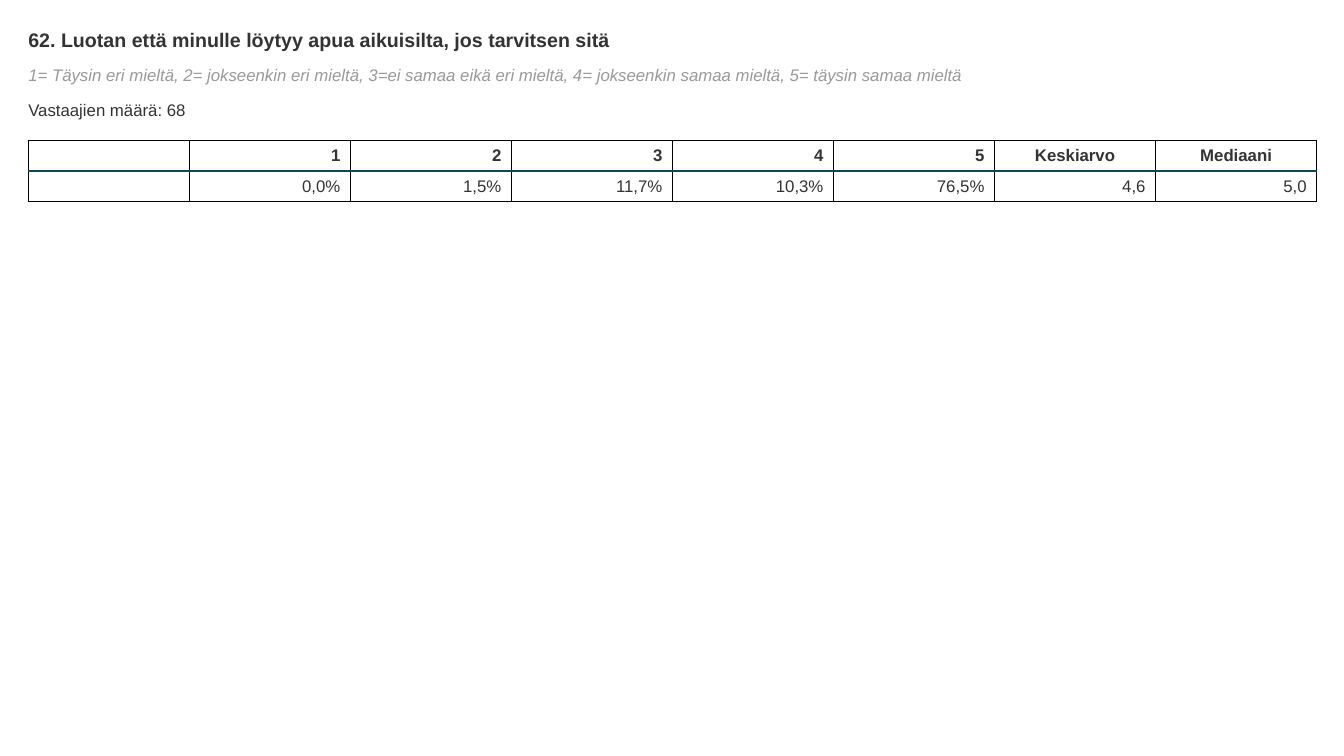
from dataclasses import dataclass

from lxml.etree import SubElement
from pptx import Presentation
from pptx.dml.color import RGBColor
from pptx.enum.text import MSO_ANCHOR as Anchor, MSO_AUTO_SIZE as AutoSize, PP_ALIGN as Align
from pptx.oxml.ns import qn
from pptx.util import Emu, Pt

PX = 9525  # EMU per px, 96 px to the inch
COLOURS = {"paper": "FFFFFF", "text": "333333", "scale": "999999",
           "grid": "000000", "rule": "124456"}
FONT = "Arial"
LEFT, WIDTH = 27, 1227
TABLE_TOP, ROW_HEIGHT = 134, 29


@dataclass
class Line:
    text: str
    top: int
    height: int
    size: int = 12
    colour: str = "text"
    bold: bool = False
    italic: bool = False


@dataclass
class Column:
    heading: str
    value: str
    heading_align: Align = Align.RIGHT


TITLE = Line("62. Luotan että minulle löytyy apua aikuisilta, jos tarvitsen sitä",
             27, 22, size=14, bold=True)
DETAILS = [
    Line("1= Täysin eri mieltä, 2= jokseenkin eri mieltä, 3=ei samaa eikä eri mieltä, "
         "4= jokseenkin samaa mieltä, 5= täysin samaa mieltä",
         62, 19, colour="scale", italic=True),
    Line("Vastaajien määrä: 68", 95, 19),
]
COLUMNS = [
    Column("", ""),
    Column("1", "0,0%"),
    Column("2", "1,5%"),
    Column("3", "11,7%"),
    Column("4", "10,3%"),
    Column("5", "76,5%"),
    Column("Keskiarvo", "4,6", Align.CENTER),
    Column("Mediaani", "5,0", Align.CENTER),
]


def px(length: int) -> Emu:
    return Emu(length * PX)


def style_para(para, size: int, colour: str, bold: bool = False,
               italic: bool = False, align: Align = Align.LEFT) -> None:
    para.alignment = align
    font = para.font
    font.name, font.size = FONT, Pt(size)
    font.bold, font.italic = bold, italic
    font.color.rgb = RGBColor.from_string(COLOURS[colour])


def set_line(box, line: Line) -> None:
    box.left, box.top = px(LEFT), px(line.top)
    box.width, box.height = px(WIDTH), px(line.height)
    frame = box.text_frame
    frame.margin_left = frame.margin_right = frame.margin_top = frame.margin_bottom = 0
    frame.word_wrap = True
    frame.auto_size = AutoSize.SHAPE_TO_FIT_TEXT
    frame.vertical_anchor = Anchor.TOP
    frame.text = line.text
    style_para(frame.paragraphs[0], line.size, line.colour, line.bold, line.italic)


def add_border(cell, side: str, colour: str, points: int) -> None:
    border = SubElement(cell._tc.get_or_add_tcPr(), qn(f"a:ln{side}"), w=str(Pt(points)))
    fill = SubElement(border, qn("a:solidFill"))
    SubElement(fill, qn("a:srgbClr"), val=COLOURS[colour])


def fill_cell(cell, text: str, align: Align, is_heading: bool) -> None:
    cell.text = text
    cell.vertical_anchor = Anchor.MIDDLE
    para = cell.text_frame.paragraphs[0]
    style_para(para, 12, "text", bold=is_heading, align=align)
    if not text:  # keeps an empty cell from stretching its row
        SubElement(para._p, qn("a:endParaRPr"), sz="1200")
    # Borders come before the fill in the cell properties
    rule_side = "B" if is_heading else "T"
    for side in "LRTB":
        if side == rule_side:
            add_border(cell, side, "rule", 2)
        else:
            add_border(cell, side, "grid", 1)
    cell.fill.solid()
    cell.fill.fore_color.rgb = RGBColor.from_string(COLOURS["paper"])


def add_results(page, columns: list[Column]) -> None:
    table = page.shapes.add_table(2, len(columns), px(LEFT), px(TABLE_TOP),
                                  px(WIDTH), px(2 * ROW_HEIGHT)).table
    table.horz_banding = False
    for row in table.rows:
        row.height = px(ROW_HEIGHT)
    for index, column in enumerate(columns):
        fill_cell(table.cell(0, index), column.heading, column.heading_align, True)
        fill_cell(table.cell(1, index), column.value, Align.RIGHT, False)


def main() -> None:
    deck = Presentation()
    deck.slide_width, deck.slide_height = px(1280), px(720)
    page = deck.slides.add_slide(deck.slide_layouts[5])

    # Question, answer scale and number of respondents
    set_line(page.shapes.title, TITLE)
    for line in DETAILS:
        set_line(page.shapes.add_textbox(0, 0, 0, 0), line)

    # Share of each answer, mean and median
    add_results(page, COLUMNS)
    deck.save("out.pptx")


if __name__ == "__main__":
    main()
